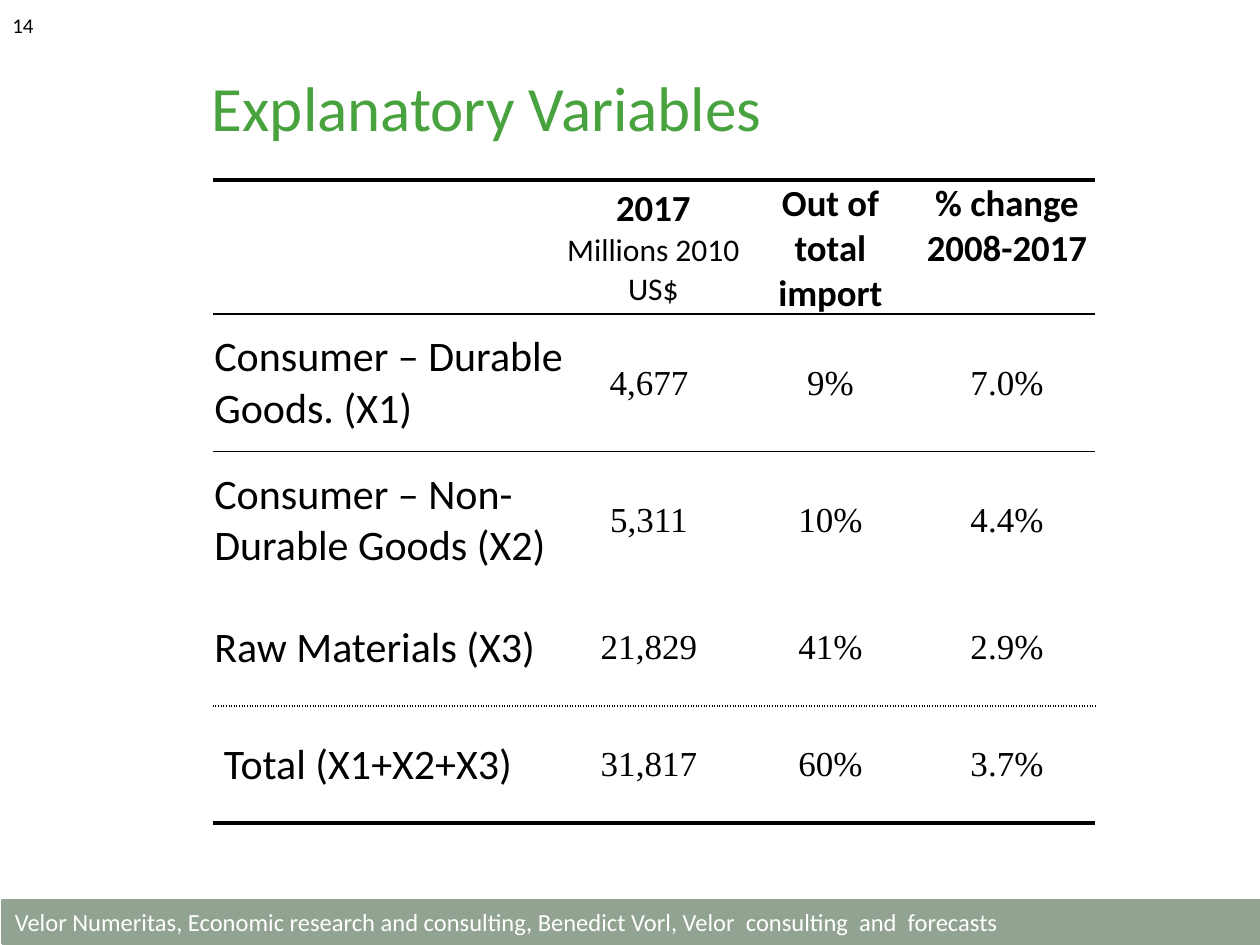
from lxml import etree
from pptx import Presentation
from pptx.dml.color import RGBColor
from pptx.enum.shapes import MSO_SHAPE
from pptx.enum.text import MSO_ANCHOR, PP_ALIGN
from pptx.oxml.ns import qn
from pptx.util import Cm, Pt

RECT = MSO_SHAPE.RECTANGLE
TOP, MIDDLE = MSO_ANCHOR.TOP, MSO_ANCHOR.MIDDLE
LEFT, CENTER = PP_ALIGN.LEFT, PP_ALIGN.CENTER

GREEN = RGBColor(0x48, 0xA2, 0x3E)
SAGE = RGBColor(0x92, 0xA3, 0x91)
BLACK = RGBColor(0, 0, 0)
WHITE = RGBColor(255, 255, 255)

SANS, SERIF = "Calibri", "Times New Roman"

COLUMN_WIDTHS = [7.09, 3.58, 3.56, 3.56]
ROW_HEIGHTS = [2.49, 2.77, 2.77, 2.36, 2.36]
HEADERS = [
    [("2017", 21, True), ("Millions 2010 US$", 18, False)],
    [("Out of total import", 21, True)],
    [("% change", 21, True), ("2008-2017", 21, True)],
]
ROWS = [
    ("Consumer – Durable Goods. (X1)", "4,677 ", "9%", "7.0%"),
    ("Consumer – Non- Durable Goods (X2)", "5,311 ", "10%", "4.4%"),
    ("Raw Materials (X3)", "21,829 ", "41%", "2.9%"),
    (" Total (X1+X2+X3)", "31,817 ", "60%", "3.7%"),
]
RULES = [(2.25, "solid"), (1, "solid"), (1, "solid"), None, (1, "sysDot"), (2.25, "solid")]


def add_line(tf, index, text, size, color, font=SANS, bold=False, align=LEFT):
    """Write one paragraph, reusing the empty first one."""
    p = tf.add_paragraph() if index else tf.paragraphs[0]
    p.alignment = align
    r = p.add_run()
    r.text = text
    r.font.name = font
    r.font.size = Pt(size)
    r.font.bold = bold
    r.font.color.rgb = color


def add_text(s, box, text, size, color, align=LEFT):
    """Place a wrapped, vertically centred text box."""
    tf = s.shapes.add_textbox(*map(Cm, box)).text_frame
    tf.word_wrap = True
    tf.vertical_anchor = MIDDLE
    add_line(tf, 0, text, size, color, align=align)


def add_footer(s, box):
    """Place the footer band with its text."""
    sp = s.shapes.add_shape(RECT, *map(Cm, box))
    sp.shadow.inherit = False
    sp.fill.solid()
    sp.fill.fore_color.rgb = SAGE
    sp.line.color.rgb = SAGE
    sp.line.width = Pt(2)
    tf = sp.text_frame
    tf.word_wrap = True
    tf.vertical_anchor = MIDDLE
    add_line(tf, 0, "Velor Numeritas, Economic research and consulting, Benedict Vorl, "
             "Velor  consulting  and  forecasts", 14, WHITE)


def set_borders(cell, top, bottom):
    """Rule a cell above and below, leaving its sides open."""
    tcPr = cell._tc.get_or_add_tcPr()
    sides = [("a:lnL", None), ("a:lnR", None), ("a:lnT", top), ("a:lnB", bottom)]
    for index, (tag, rule) in enumerate(sides):
        ln = etree.Element(qn(tag))
        tcPr.insert(index, ln)
        if rule is None:
            etree.SubElement(ln, qn("a:noFill"))
            continue
        width, dash = rule
        ln.set("w", str(Pt(width)))
        fill = etree.SubElement(ln, qn("a:solidFill"))
        etree.SubElement(fill, qn("a:srgbClr"), val=str(BLACK))
        etree.SubElement(ln, qn("a:prstDash"), val=dash)


def fill_cell(cell, row, column):
    """Write the text of one table cell."""
    tf = cell.text_frame
    if row == 0:
        lines = HEADERS[column - 1] if column else []
        for index, (text, size, bold) in enumerate(lines):
            add_line(tf, index, text, size, BLACK, bold=bold, align=CENTER)
    elif column == 0:
        add_line(tf, 0, ROWS[row - 1][0], 24, BLACK)
    else:
        add_line(tf, 0, ROWS[row - 1][column], 20, BLACK, SERIF, align=CENTER)


def add_variables_table(s, left, top):
    """Place the table of explanatory variables."""
    table = s.shapes.add_table(len(ROW_HEIGHTS), len(COLUMN_WIDTHS), Cm(left), Cm(top),
                               Cm(sum(COLUMN_WIDTHS)), Cm(sum(ROW_HEIGHTS))).table
    table.first_row = False
    table.horz_banding = False
    for column, width in zip(table.columns, COLUMN_WIDTHS):
        column.width = Cm(width)
    for i, height in enumerate(ROW_HEIGHTS):
        table.rows[i].height = Cm(height)
        for j in range(len(COLUMN_WIDTHS)):
            cell = table.cell(i, j)
            cell.margin_left = cell.margin_right = cell.margin_top = Cm(0.03)
            cell.margin_bottom = 0
            cell.vertical_anchor = TOP if (i, j) == (0, 3) else MIDDLE
            if i:
                cell.fill.solid()
                cell.fill.fore_color.rgb = WHITE
            else:
                cell.fill.background()
            set_borders(cell, RULES[i], RULES[i + 1])
            fill_cell(cell, i, j)


def main():
    """Build and save the slide."""
    prs = Presentation()
    prs.slide_width, prs.slide_height = Cm(25.4), Cm(19.05)
    s = prs.slides.add_slide(prs.slide_layouts[6])
    add_footer(s, (0.05, 18.16, 25.43, 0.86))
    add_text(s, (0.71, 0.61, 18.21, 3.05), "Explanatory Variables", 36, GREEN, CENTER)
    add_text(s, (0, 0, 5.92, 1.02), "14", 12, BLACK)
    add_variables_table(s, 4.29, 3.63)
    prs.save("out.pptx")


if __name__ == "__main__":
    main()
